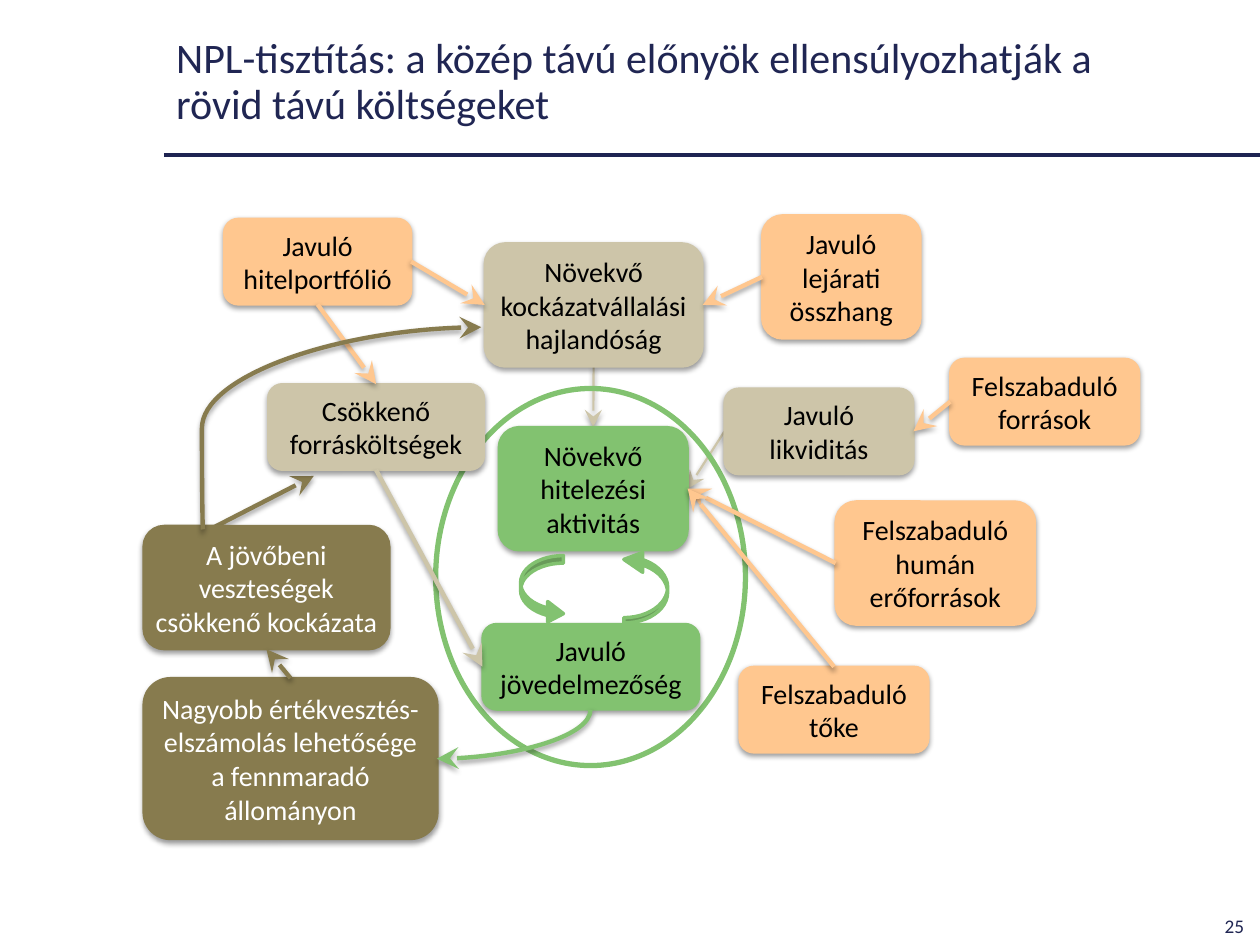
from lxml.etree import SubElement
from pptx import Presentation
from pptx.dml.color import RGBColor
from pptx.enum.shapes import MSO_CONNECTOR, MSO_SHAPE
from pptx.enum.text import MSO_ANCHOR, PP_ALIGN
from pptx.oxml.ns import qn
from pptx.util import Pt

NAVY = RGBColor(0x20, 0x26, 0x53)
RULE = RGBColor(0x1E, 0x24, 0x52)
ORANGE = RGBColor(0xFF, 0xC7, 0x8F)
SAND = RGBColor(0xCD, 0xC5, 0xA9)
OLIVE = RGBColor(0x87, 0x7B, 0x4E)
GREEN = RGBColor(0x82, 0xC2, 0x70)
BLACK = RGBColor(0, 0, 0)
WHITE = RGBColor(255, 255, 255)

TOP, LEFT, BOTTOM, RIGHT = range(4)
TWO_LINES, THREE_LINES, FOUR_LINES = 49, 70.5, 92

# key: (text, fill, left, top, width, height)
BOXES = {
    "capital": ("Felszabaduló tőke", ORANGE, 422.6, 381, 108, TWO_LINES),
    "funding": ("Csökkenő forrásköltségek", SAND, 153.2, 219.5, 123.4, TWO_LINES),
    "provision": ("Nagyobb értékvesztés-elszámolás lehetősége a fennmaradó állományon",
                  OLIVE, 82, 387.5, 168, FOUR_LINES),
    "liquidity": ("Javuló likviditás", SAND, 414, 222, 108, TWO_LINES),
    "losses": ("A jövőbeni veszteségek csökkenő kockázata",
               OLIVE, 82, 300.5, 140.5, THREE_LINES),
    "staff": ("Felszabaduló humán erőforrások", ORANGE, 477.5, 286.5, 114, THREE_LINES),
    "maturity": ("Javuló lejárati összhang", ORANGE, 435.5, 123, 90.5, THREE_LINES),
    "portfolio": ("Javuló hitelportfólió", ORANGE, 128, 125, 107, TWO_LINES),
    "appetite": ("Növekvő kockázatvállalási hajlandóság",
                 SAND, 277, 139, 124.5, THREE_LINES),
    "resources": ("Felszabaduló források", ORANGE, 543, 205, 108, TWO_LINES),
    "lending": ("Növekvő hitelezési aktivitás", GREEN, 285, 244, 108, THREE_LINES),
    "profit": ("Javuló jövedelmezőség", GREEN, 275.7, 356.5, 124, TWO_LINES),
}

# (start box, side, end box, side, colour)
LINKS = [
    ("portfolio", BOTTOM, "funding", TOP, ORANGE),
    ("staff", LEFT, "lending", RIGHT, ORANGE),
    ("maturity", LEFT, "appetite", RIGHT, ORANGE),
    ("portfolio", RIGHT, "appetite", LEFT, ORANGE),
    ("capital", TOP, "lending", RIGHT, ORANGE),
    ("provision", TOP, "losses", BOTTOM, OLIVE),
    ("resources", LEFT, "liquidity", RIGHT, ORANGE),
    ("funding", BOTTOM, "profit", LEFT, SAND),
]
THIN_LINKS = [
    ("liquidity", LEFT, "lending", RIGHT, SAND),
    ("appetite", BOTTOM, "lending", TOP, SAND),
]


class SlideBuilder:
    font_name = "Calibri"
    box_size = 16
    arrow_width = 2.5

    def __init__(self, slide):
        self.slide = slide
        self.shapes = slide.shapes

    def fill_text(self, frame, text, size, color, alignment):
        frame.word_wrap = True
        frame.text = text
        paragraph = frame.paragraphs[0]
        paragraph.alignment = alignment
        font = paragraph.runs[0].font
        font.name, font.size, font.color.rgb = self.font_name, Pt(size), color
        return paragraph

    def text(self, text, left, top, width, height, size, alignment=PP_ALIGN.LEFT):
        shape = self.shapes.add_textbox(Pt(left), Pt(top), Pt(width), Pt(height))
        paragraph = self.fill_text(shape.text_frame, text, size, NAVY, alignment)
        return shape.text_frame, paragraph

    def cast_shadow(self, effects):
        """Fill an effect list with a soft shadow falling downwards."""
        shadow = SubElement(effects, qn("a:outerShdw"), blurRad=str(Pt(3.1)),
                            dist=str(Pt(1.6)), dir="5400000", rotWithShape="0")
        color = SubElement(shadow, qn("a:srgbClr"), val="000000")
        SubElement(color, qn("a:alpha"), val="38000")

    def figure(self, kind, left, top, width, height, line, line_width, fill=None):
        shape = self.shapes.add_shape(kind, Pt(left), Pt(top), Pt(width), Pt(height))
        shape.shadow.inherit = False
        shape.line.color.rgb = line
        shape.line.width = Pt(line_width)
        if fill is None:
            shape.fill.background()
        else:
            shape.fill.solid()
            shape.fill.fore_color.rgb = fill
        return shape

    def box(self, text, fill, left, top, width, height):
        shape = self.figure(MSO_SHAPE.ROUNDED_RECTANGLE, left, top, width, height,
                            fill, 1.25, fill)
        self.cast_shadow(shape._element.spPr.find(qn("a:effectLst")))
        frame = shape.text_frame
        frame.margin_left = frame.margin_right = Pt(3)
        frame.margin_top = frame.margin_bottom = Pt(3)
        frame.vertical_anchor = MSO_ANCHOR.MIDDLE
        color = WHITE if fill == OLIVE else BLACK
        self.fill_text(frame, text, self.box_size, color, PP_ALIGN.CENTER)
        return shape

    def cycle_arrow(self, left, top, width, height, adjustments, rotation=0):
        shape = self.figure(MSO_SHAPE.CURVED_RIGHT_ARROW, left, top, width, height,
                            GREEN, 2, GREEN)
        shape.rotation = rotation
        for index, value in enumerate(adjustments):
            shape.adjustments[index] = value

    def line(self, start, end, color, width, kind=MSO_CONNECTOR.STRAIGHT):
        connector = self.shapes.add_connector(kind, *map(Pt, start + end))
        connector.line.color.rgb = color
        connector.line.width = Pt(width)
        SubElement(connector._element.spPr, qn("a:effectLst"))
        return connector

    def arrow(self, start, end, color, width=arrow_width, kind=MSO_CONNECTOR.STRAIGHT):
        connector = self.line(start, end, color, width, kind)
        properties = connector._element.spPr
        SubElement(properties.find(qn("a:ln")), qn("a:tailEnd"),
                   type="stealth", w="lg", len="lg")
        self.cast_shadow(properties.find(qn("a:effectLst")))
        return connector

    def link(self, start, start_side, end, end_side, color, width=arrow_width):
        connector = self.arrow((0, 0), (1, 1), color, width)
        connector.begin_connect(start, start_side)
        connector.end_connect(end, end_side)
        return connector

    def send_to_back(self, shape):
        self.shapes._spTree.insert(2, shape._element)


def main():
    presentation = Presentation()
    presentation.slide_width, presentation.slide_height = Pt(720), Pt(540)
    builder = SlideBuilder(presentation.slides.add_slide(presentation.slide_layouts[6]))

    builder.line((93.6, 88.6), (720, 88.6), RULE, 2.25)
    frame, paragraph = builder.text(
        "NPL-tisztítás: a közép távú előnyök ellensúlyozhatják a rövid távú költségeket",
        93.6, 26, 587, 42.5, 24)
    frame.vertical_anchor = MSO_ANCHOR.MIDDLE
    paragraph.line_spacing = 0.9

    builder.figure(MSO_SHAPE.OVAL, 249, 222, 177, 215.5, GREEN, 3)
    boxes = {key: builder.box(*details) for key, details in BOXES.items()}

    for start, start_side, end, end_side, color in LINKS:
        builder.link(boxes[start], start_side, boxes[end], end_side, color)
    for start, start_side, end, end_side, color in THIN_LINKS:
        builder.send_to_back(
            builder.link(boxes[start], start_side, boxes[end], end_side, color, 1.25))

    builder.send_to_back(builder.arrow((116, 304.5), (179.3, 272), OLIVE))
    sweep = builder.arrow((116, 302.5), (275, 187), OLIVE, kind=MSO_CONNECTOR.CURVE)
    guides = sweep._element.spPr.find(qn("a:prstGeom")).get_or_add_avLst()
    SubElement(guides, qn("a:gd"), name="adj1", fmla="val -400")

    # A quarter turn makes the bend leave downwards and arrive from the right.
    bend = builder.arrow((279.5, 375.7), (307.5, 463.5), GREEN, kind=MSO_CONNECTOR.CURVE)
    bend._element.spPr.find(qn("a:prstGeom")).set("prst", "curvedConnector2")
    bend._element.spPr.find(qn("a:xfrm")).set("rot", "5400000")

    builder.cycle_arrow(297.5, 317.5, 24.5, 39, (0.175, 0.476, 0.368))
    builder.cycle_arrow(356.5, 314, 25, 42, (0.123, 0.452, 0.429), rotation=180)
    builder.text("25", 643, 519, 75, 17.5, 11, PP_ALIGN.RIGHT)
    presentation.save("out.pptx")


if __name__ == "__main__":
    main()
